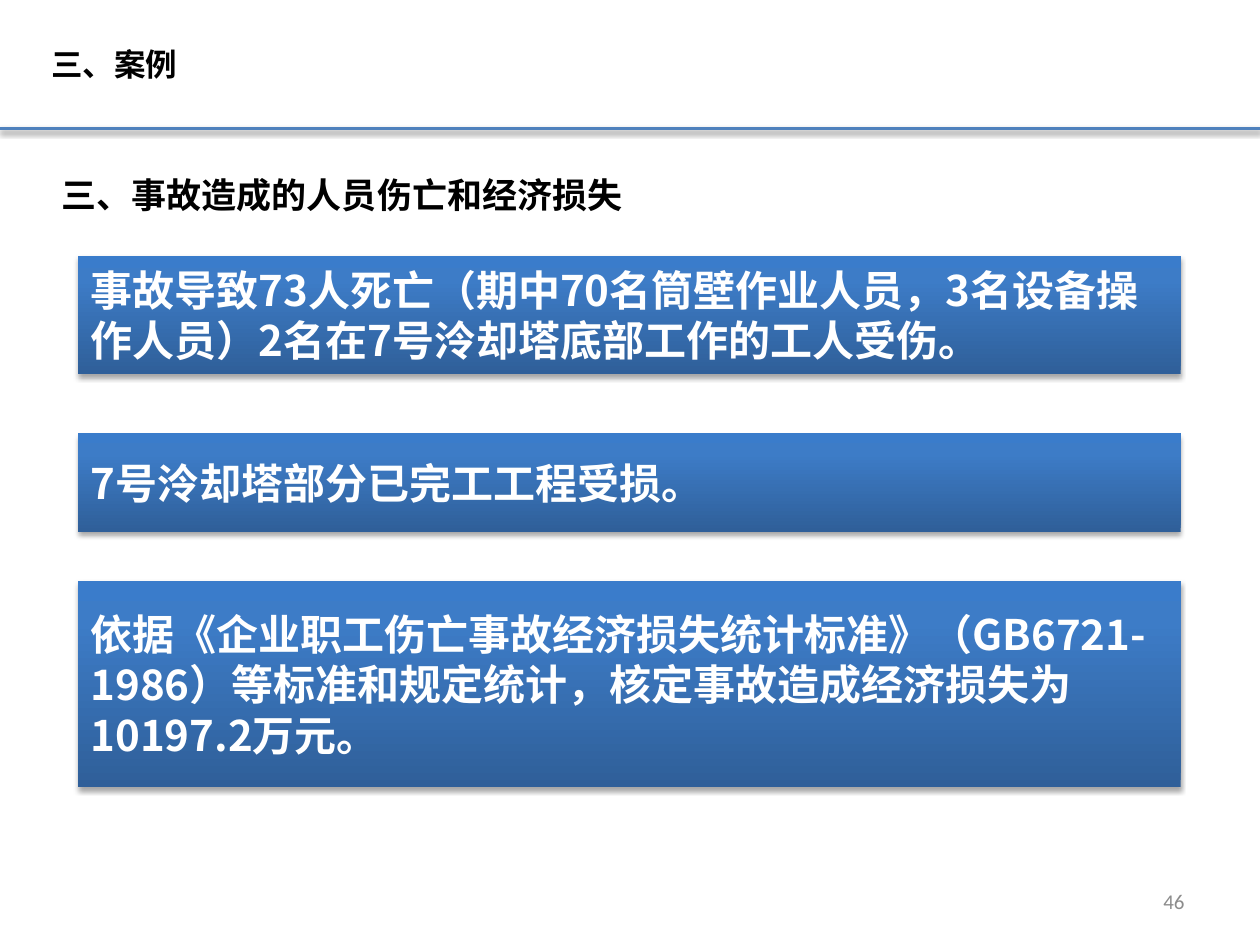
import pptx
import pptx.util
import pptx.dml.color
import pptx.enum.shapes
import pptx.enum.text
import pptx.oxml
import pptx.oxml.ns
from pptx.util import Inches

CJK_FONT = "Noto Sans CJK SC"
HEADING = {"name": CJK_FONT, "bold": True, "color": "000000"}
PANEL_TEXT = {"name": CJK_FONT, "bold": True, "color": "FFFFFF", "size": 24}
PAGE_NUMBER = {"name": "Calibri", "color": "8C8C8C", "size": 12}
PANEL_STOPS = [(0, "2F5F99"), (80, "3D7CC7"), (100, "3A7CCB")]
PANELS = [
    (2.03, 0.94, "事故导致73人死亡（期中70名筒壁作业人员，3名设备操作人员）2名在7号泠却塔底部工作的工人受伤。"),
    (3.44, 0.78, "7号泠却塔部分已完工工程受损。"),
    (4.61, 1.64, "依据《企业职工伤亡事故经济损失统计标准》（GB6721-1986）等标准和规定统计，核定事故造成经济损失为10197.2万元。"),
]


def color(hex_text):
    return pptx.dml.color.RGBColor.from_string(hex_text)


def xml(text):
    return pptx.oxml.parse_xml(text.replace(" ", f" {pptx.oxml.ns.nsdecls('a')} ", 1))


def set_text(shape, text, text_format, align="LEFT", anchor="TOP"):
    frame = shape.text_frame
    frame.word_wrap = True
    frame.vertical_anchor = getattr(pptx.enum.text.MSO_ANCHOR, anchor)
    paragraph = frame.paragraphs[0]
    paragraph.alignment = getattr(pptx.enum.text.PP_ALIGN, align)
    run = paragraph.add_run()
    run.text = text
    for key, value in text_format.items():
        if key == "color":
            run.font.color.rgb = color(value)
        elif key == "size":
            run.font.size = pptx.util.Pt(value)
        else:
            setattr(run.font, key, value)
    # East Asian glyphs take the same typeface
    run.font._element.append(xml(f'<a:ea typeface="{text_format["name"]}"/>'))


def add_shadow(shape, distance, opacity):
    properties = shape._element.spPr
    for old_effects in properties.findall(pptx.oxml.ns.qn("a:effectLst")):
        properties.remove(old_effects)
    properties.append(xml(
        f'<a:effectLst ><a:outerShdw blurRad="{pptx.util.Pt(3.1)}" '
        f'dist="{pptx.util.Pt(distance)}" dir="5400000" rotWithShape="0">'
        f'<a:srgbClr val="000000"><a:alpha val="{opacity * 1000}"/></a:srgbClr>'
        '</a:outerShdw></a:effectLst>'))


def set_gradient(shape, stops):
    shape.fill.gradient()
    stop_list = shape._element.spPr.find(".//" + pptx.oxml.ns.qn("a:gsLst"))
    for old_stop in list(stop_list):
        stop_list.remove(old_stop)
    for position, hex_text in stops:
        stop_list.append(xml(
            f'<a:gs pos="{position * 1000}"><a:srgbClr val="{hex_text}"/></a:gs>'))
    shape.fill.gradient_angle = 90


def add_label(slide, box, text, text_format, **placing):
    label = slide.shapes.add_textbox(*map(Inches, box))
    set_text(label, text, text_format, **placing)


def add_divider(slide, top, width):
    divider = slide.shapes.add_connector(
        pptx.enum.shapes.MSO_CONNECTOR.STRAIGHT,
        Inches(0), Inches(top), Inches(width), Inches(top))
    divider.line.color.rgb = color("4F81BD")
    divider.line.width = pptx.util.Pt(2)
    add_shadow(divider, distance=1.6, opacity=38)


def add_panel(slide, box, text):
    panel = slide.shapes.add_shape(
        pptx.enum.shapes.MSO_SHAPE.RECTANGLE, *map(Inches, box))
    set_gradient(panel, PANEL_STOPS)
    panel.line.fill.background()
    panel.shadow.inherit = False
    add_shadow(panel, distance=1.8, opacity=35)
    set_text(panel, text, PANEL_TEXT, anchor="MIDDLE")


def main():
    presentation = pptx.Presentation()
    presentation.slide_width, presentation.slide_height = Inches(10), Inches(7.5)
    slide = presentation.slides.add_slide(presentation.slide_layouts[6])

    # Header
    add_divider(slide, 1.02, 10)
    add_label(slide, (0.31, 0.31, 3.2, 0.4), "三、案例", {**HEADING, "size": 18})
    add_label(slide, (0.39, 1.33, 5.39, 0.44), "三、事故造成的人员伤亡和经济损失",
              {**HEADING, "size": 20})

    # Loss statements
    for top, height, text in PANELS:
        add_panel(slide, (0.62, top, 8.75, height), text)

    # Page number
    add_label(slide, (7.17, 6.95, 2.33, 0.4), "46", PAGE_NUMBER,
              align="RIGHT", anchor="MIDDLE")

    presentation.save("out.pptx")


if __name__ == "__main__":
    main()
